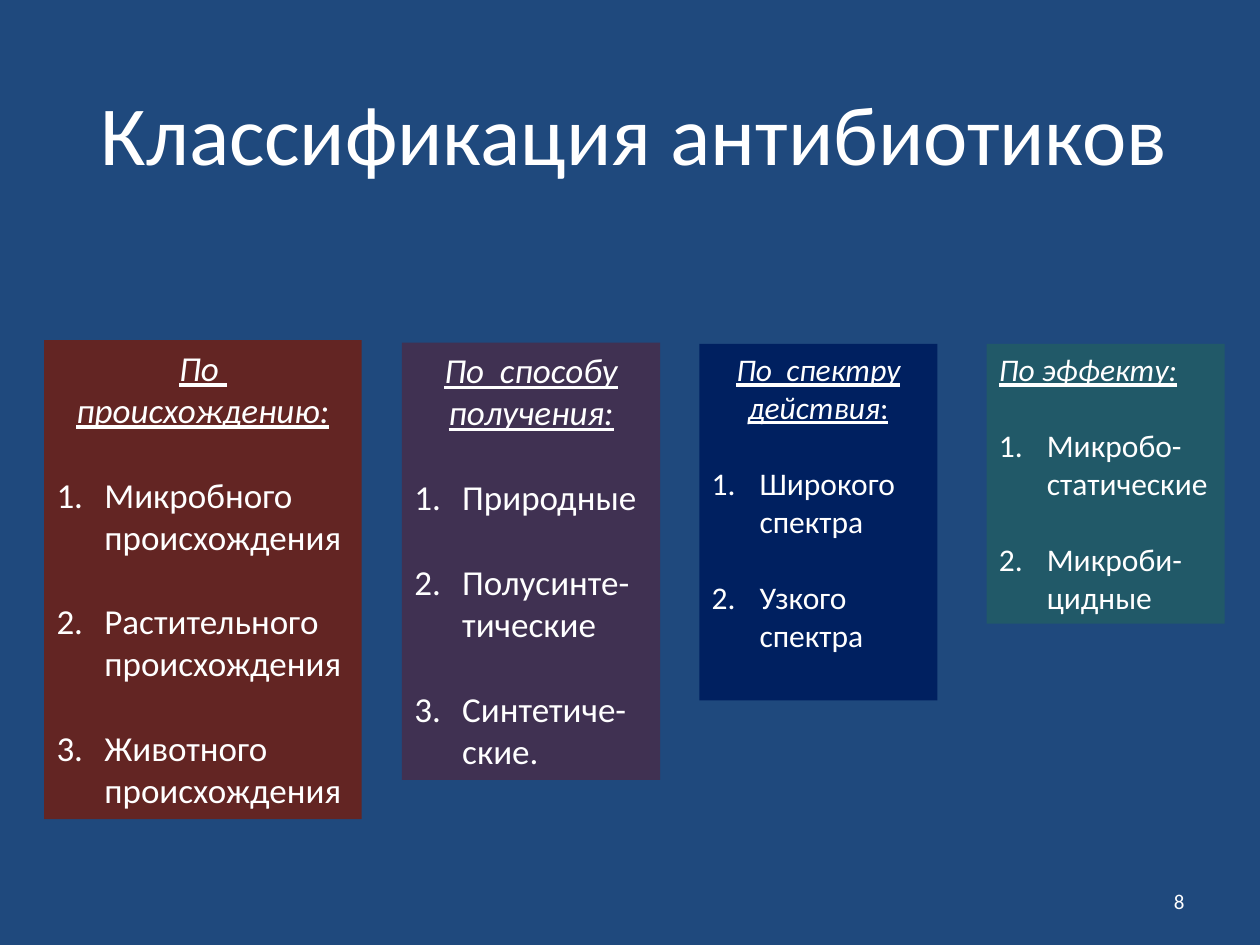
from lxml.etree import SubElement
from pptx import Presentation
from pptx.dml.color import RGBColor
from pptx.enum.shapes import MSO_SHAPE
from pptx.enum.text import MSO_ANCHOR, PP_ALIGN
from pptx.oxml.ns import qn
from pptx.util import Inches, Pt

WHITE = "FFFFFF"
LINE_HEIGHT = 1.22  # Calibri line height as a share of its size

deck = Presentation()
deck.slide_width, deck.slide_height = Inches(10), Inches(7.5)
slide = deck.slides.add_slide(deck.slide_layouts[6])


def paint(fill, color):
    fill.solid()
    fill.fore_color.rgb = RGBColor.from_string(color)


def add_block(area, lines, size, align, fill=None, anchor=MSO_ANCHOR.TOP):
    """Place a text block; area is left, top, width, height in % of the slide."""
    sides = (deck.slide_width, deck.slide_height) * 2
    block = slide.shapes.add_shape(
        MSO_SHAPE.RECTANGLE, *(int(side * share / 100) for side, share in zip(sides, area))
    ) if fill else slide.shapes.add_textbox(
        *(int(side * share / 100) for side, share in zip(sides, area)))
    if fill:
        block.shadow.inherit = False
        paint(block.fill, fill)
        block.line.fill.background()
    frame = block.text_frame
    frame.word_wrap = True
    frame.vertical_anchor = anchor
    frame.text = "\n".join(lines)
    for paragraph in frame.paragraphs:
        paragraph.alignment = align
        paragraph.font.name = "Calibri"
        paragraph.font.size = Pt(size)
        paint(paragraph.font.fill, WHITE)
    return frame


paint(slide.background.fill, "1F497D")

# Title and page number
add_block((3.5, 8, 93.7, 12.13), ["Классификация антибиотиков"], 48, PP_ALIGN.CENTER)
add_block((71.7, 92.67, 23.3, 5.33), ["8"], 12, PP_ALIGN.RIGHT, anchor=MSO_ANCHOR.MIDDLE)

# Classifications: area, fill, text size, heading alignment, heading, classes
classifications = [
    ((3.5, 36, 25.2, 50.67), "632523", 20, PP_ALIGN.CENTER,
     ["По ", "происхождению:"],
     ["Микробного происхождения", "Растительного происхождения",
      "Животного происхождения"]),
    ((31.9, 36.27, 20.5, 46.27), "403152", 20, PP_ALIGN.CENTER,
     ["По  способу", "получения:"],
     ["Природные", "Полусинте-тические", "Синтетиче-ские."]),
    ((55.5, 36.4, 18.9, 37.73), "002060", 18, PP_ALIGN.CENTER,
     ["По  спектру", "действия"],
     ["Широкого спектра", "Узкого спектра"]),
    ((78.3, 36.4, 18.9, 29.6), "215968", 18, PP_ALIGN.LEFT,
     ["По эффекту:"],
     ["Микробо-статические", "Микроби-цидные"]),
]

for area, fill, size, align, heading, classes in classifications:
    paragraphs = add_block(area, heading + classes, size, align, fill).paragraphs

    # Underlined italic heading
    for paragraph in paragraphs[:len(heading)]:
        paragraph.font.italic = paragraph.font.underline = True
    if heading[-1] == "действия":
        colon = paragraphs[len(heading) - 1].add_run()
        colon.text = ":"
        colon.font.italic = False

    # Numbered classes, one line apart
    for paragraph in paragraphs[len(heading):]:
        paragraph.alignment = PP_ALIGN.LEFT
        paragraph.space_before = Pt(size * LINE_HEIGHT)
        properties = paragraph.line_spacing = None
        properties = paragraph._p.get_or_add_pPr()
        properties.set("marL", str(Inches(0.38)))
        properties.set("indent", str(-Inches(0.38)))
        numbering = SubElement(properties, qn("a:buAutoNum"), type="arabicPeriod")
        properties.find(qn("a:defRPr")).addprevious(numbering)

deck.save("out.pptx")
